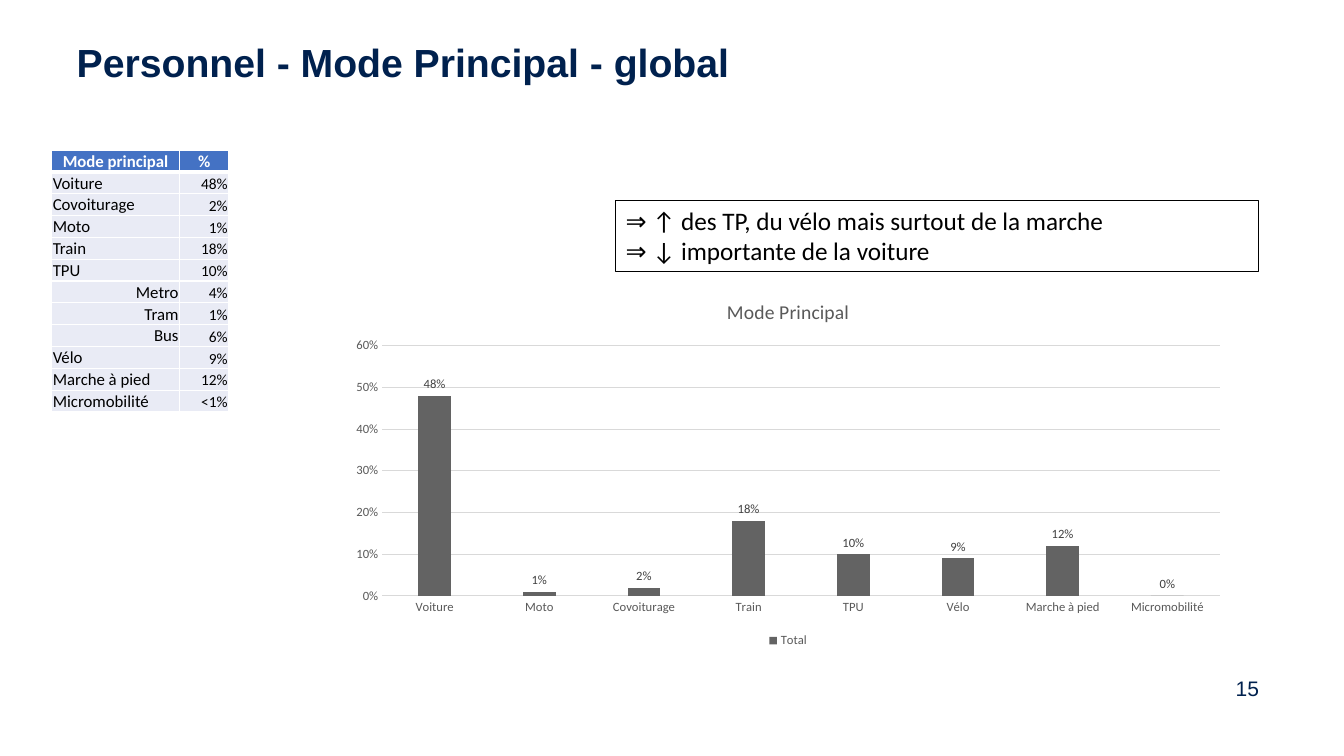
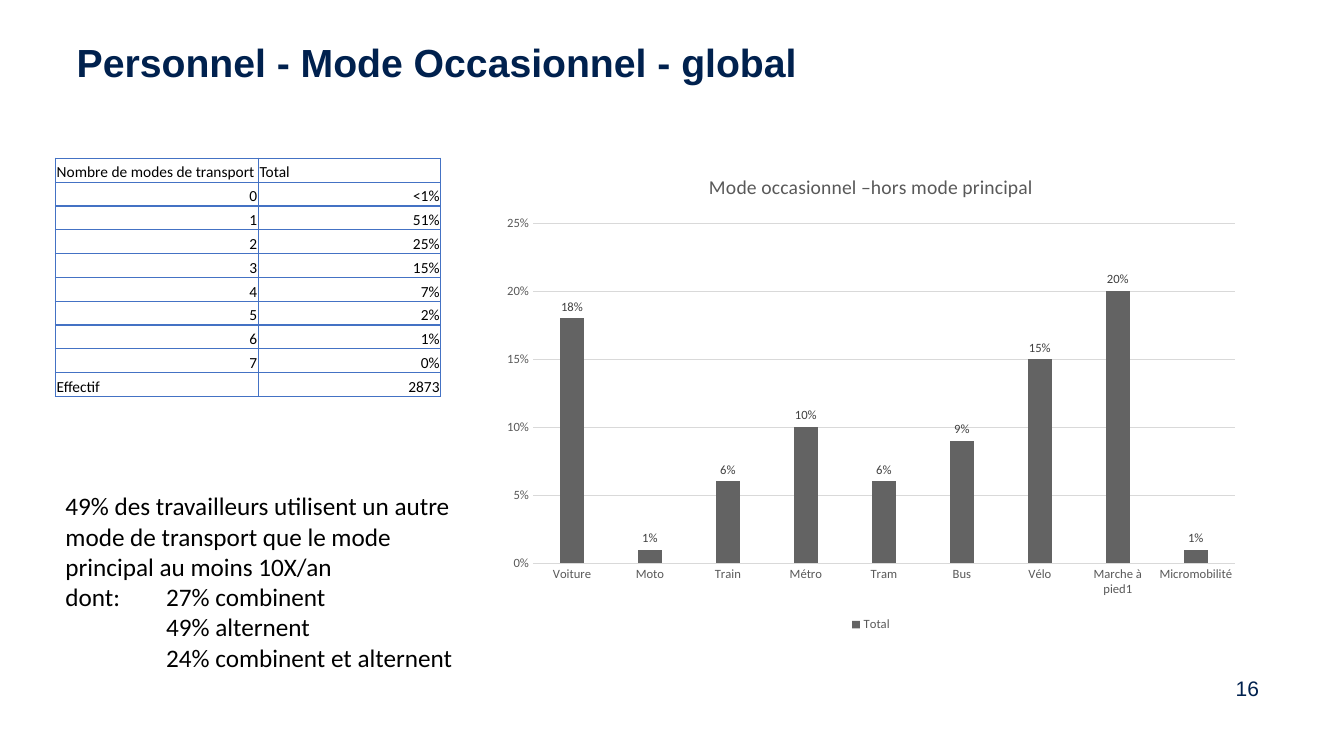
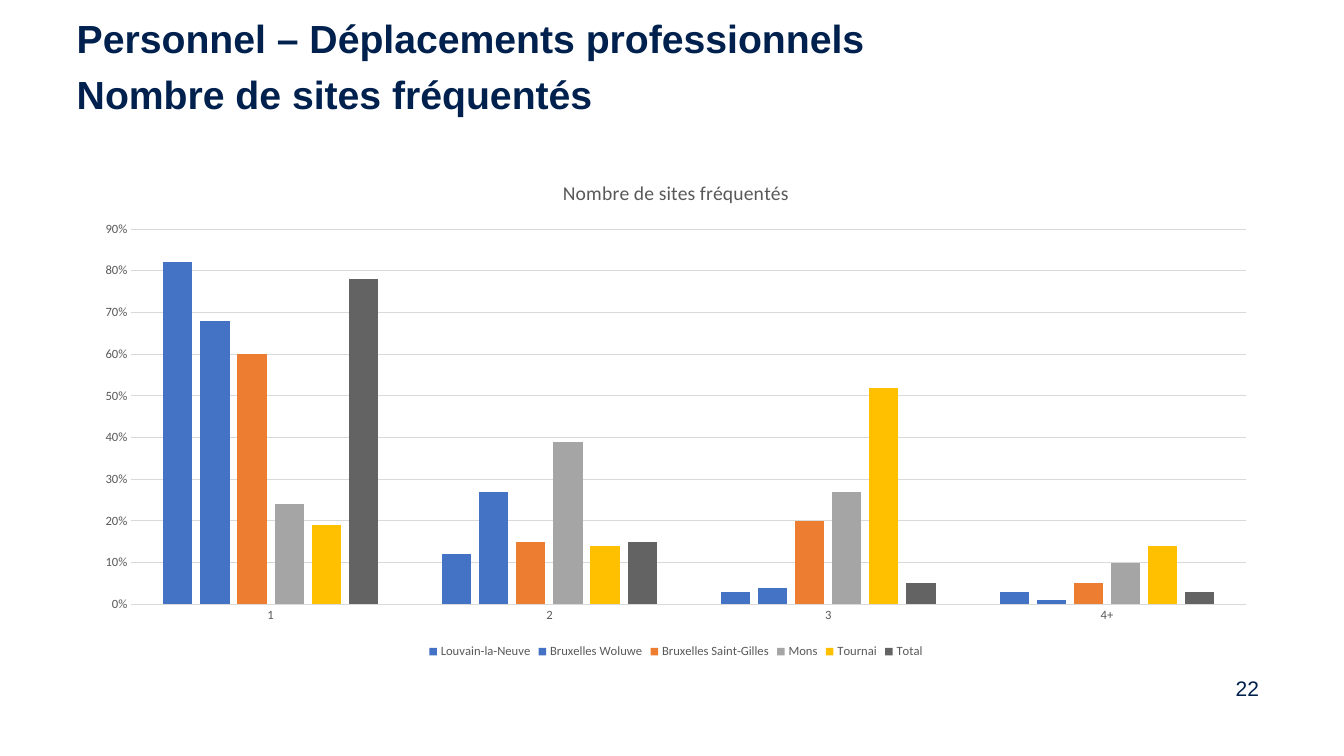
from lxml import etree
from pptx import Presentation
from pptx.chart.data import CategoryChartData
from pptx.dml.color import RGBColor
from pptx.enum.chart import XL_CHART_TYPE, XL_LABEL_POSITION, XL_LEGEND_POSITION, XL_TICK_MARK
from pptx.enum.shapes import MSO_SHAPE
from pptx.enum.text import MSO_ANCHOR, MSO_AUTO_SIZE, PP_ALIGN
from pptx.oxml.ns import qn
from pptx.util import Cm, Pt

NAVY = RGBColor(0x00, 0x21, 0x4E)
BLACK = RGBColor(0x00, 0x00, 0x00)
WHITE = RGBColor(0xFF, 0xFF, 0xFF)
BLUE = RGBColor(0x44, 0x72, 0xC4)
PALE_BLUE = RGBColor(0xE9, 0xEB, 0xF5)
ORANGE = RGBColor(0xED, 0x7D, 0x31)
SILVER = RGBColor(0xA5, 0xA5, 0xA5)
YELLOW = RGBColor(0xFF, 0xC0, 0x00)
DARK_GREY = RGBColor(0x63, 0x63, 0x63)
AXIS_GREY = RGBColor(0x59, 0x59, 0x59)
LABEL_GREY = RGBColor(0x40, 0x40, 0x40)
GRID_GREY = RGBColor(0xD9, 0xD9, 0xD9)

COLUMN_CLUSTERED = XL_CHART_TYPE.COLUMN_CLUSTERED
OUTSIDE_END = XL_LABEL_POSITION.OUTSIDE_END
LEGEND_BOTTOM = XL_LEGEND_POSITION.BOTTOM
NO_TICK = XL_TICK_MARK.NONE
RECTANGLE = MSO_SHAPE.RECTANGLE
TOP = MSO_ANCHOR.TOP
BOTTOM = MSO_ANCHOR.BOTTOM
NO_AUTOFIT = MSO_AUTO_SIZE.NONE
LEFT = PP_ALIGN.LEFT
CENTER = PP_ALIGN.CENTER
RIGHT = PP_ALIGN.RIGHT

TITLE_ONLY = 5
PERCENT = "0%"
TITLE_FONT = {"name": "Arial", "size": Pt(28), "bold": True}
NUMBER_FONT = {"name": "Arial", "size": Pt(15), "bold": False}
BODY_FONT = {"name": "Calibri", "size": Pt(18), "bold": False}
CHART_FONT = {"name": "Calibri", "size": Pt(9), "bold": False}
CHART_TITLE_FONT = {"name": "Calibri", "size": Pt(14), "bold": False}
HEADING_SPACING = {"line_spacing": 0.9, "space_before": Pt(10)}
FRAME_FORMAT = {"word_wrap": True, "auto_size": NO_AUTOFIT, "vertical_anchor": TOP}
CELL_FORMAT = {
    "margin_left": Cm(0.03),
    "margin_right": Cm(0.03),
    "margin_top": Cm(0.03),
    "margin_bottom": Cm(0),
    "vertical_anchor": BOTTOM,
}


def set_format(target, values):
    for name, value in values.items():
        setattr(target, name, value)


def set_font(font, values, color):
    set_format(font, values)
    font.color.rgb = color


class Deck:
    def __init__(self):
        self.presentation = Presentation()
        self.presentation.slide_width = Cm(33.87)
        self.presentation.slide_height = Cm(19.05)
        self.slide = None

    def fill_frame(self, frame, lines, font, color, spacing=None, tab=None):
        set_format(frame, FRAME_FORMAT)
        for index, line in enumerate(lines):
            paragraph = frame.paragraphs[0] if index == 0 else frame.add_paragraph()
            paragraph.alignment = LEFT
            if tab:
                properties = paragraph._p.get_or_add_pPr()
                tabs = etree.SubElement(properties, qn("a:tabLst"))
                etree.SubElement(tabs, qn("a:tab"), pos=str(tab), algn="l")
            set_format(paragraph, spacing or {})
            if index == 0:
                paragraph.space_before = Pt(0)
            run = paragraph.add_run()
            run.text = line
            set_font(run.font, font, color)

    def add_slide(self, title_lines, number, title_top=0.97):
        layout = self.presentation.slide_layouts[TITLE_ONLY]
        self.slide = self.presentation.slides.add_slide(layout)
        title = self.slide.shapes.title
        position = {"left": Cm(1.68), "top": Cm(title_top), "width": Cm(22.6), "height": Cm(1.19)}
        set_format(title, position)
        self.fill_frame(title.text_frame, title_lines, TITLE_FONT, NAVY, HEADING_SPACING)
        self.add_text((30.89, 16.97, 1.5, 1.19), [number], NUMBER_FONT, NAVY, HEADING_SPACING)

    def add_text(self, box, lines, font=BODY_FONT, color=BLACK, spacing=None, tab=None):
        shape = self.slide.shapes.add_textbox(*map(Cm, box))
        self.fill_frame(shape.text_frame, lines, font, color, spacing, tab)

    def add_framed_text(self, box, lines):
        shape = self.slide.shapes.add_shape(RECTANGLE, *map(Cm, box))
        shape.shadow.inherit = False
        shape.fill.solid()
        shape.fill.fore_color.rgb = WHITE
        shape.line.color.rgb = BLACK
        shape.line.width = Pt(0.75)
        self.fill_frame(shape.text_frame, lines, BODY_FONT, BLACK)

    def set_borders(self, cell, color, thick_side=None):
        properties = cell._tc.get_or_add_tcPr()
        for index, side in enumerate(("lnL", "lnR", "lnT", "lnB")):
            width = Pt(3 if side == thick_side else 1)
            line = etree.Element(qn("a:" + side), w=str(width))
            fill = etree.SubElement(line, qn("a:solidFill"))
            etree.SubElement(fill, qn("a:srgbClr"), val=str(color))
            properties.insert(index, line)

    def add_table(self, corner, widths, row_height, rows, right_labels, label_size, banner):
        left, top = map(Cm, corner)
        graphic = self.slide.shapes.add_table(
            len(rows), len(widths), left, top, Cm(sum(widths)), Cm(row_height * len(rows))
        )
        table = graphic.table
        set_format(table, {"first_row": banner, "horz_banding": False})
        for column, width in zip(table.columns, widths):
            column.width = Cm(width)
        for row_index, row in enumerate(rows):
            table.rows[row_index].height = Cm(row_height)
            header = row_index == 0
            for column_index, text in enumerate(row):
                cell = table.cell(row_index, column_index)
                set_format(cell, CELL_FORMAT)
                if banner:
                    cell.fill.solid()
                    cell.fill.fore_color.rgb = BLUE if header else PALE_BLUE
                    thick_side = {0: "lnB", 1: "lnT"}.get(row_index)
                    self.set_borders(cell, WHITE, thick_side)
                else:
                    cell.fill.background()
                    self.set_borders(cell, BLUE)
                paragraph = cell.text_frame.paragraphs[0]
                if header:
                    paragraph.alignment = CENTER if banner else LEFT
                else:
                    aligned_right = column_index == 1 or text in right_labels
                    paragraph.alignment = RIGHT if aligned_right else LEFT
                run = paragraph.add_run()
                run.text = text
                size = label_size if header or column_index == 0 else 11
                font = {"name": "Calibri", "size": Pt(size), "bold": header and banner}
                set_font(run.font, font, WHITE if header and banner else BLACK)

    def add_column_chart(self, box, title, categories, series, maximum, step, labels=True):
        data = CategoryChartData(number_format=PERCENT)
        data.categories = categories
        for name, values, _ in series:
            data.add_series(name, values)
        chart = self.slide.shapes.add_chart(COLUMN_CLUSTERED, *map(Cm, box), data).chart
        set_font(chart.font, CHART_FONT, AXIS_GREY)

        chart.has_title = True
        chart.chart_title.include_in_layout = False
        paragraph = chart.chart_title.text_frame.paragraphs[0]
        run = paragraph.add_run()
        run.text = title
        set_font(run.font, CHART_TITLE_FONT, AXIS_GREY)

        chart.has_legend = True
        set_format(chart.legend, {"position": LEGEND_BOTTOM, "include_in_layout": False})
        set_font(chart.legend.font, CHART_FONT, AXIS_GREY)

        for axis in (chart.category_axis, chart.value_axis):
            set_format(axis, {"major_tick_mark": NO_TICK, "minor_tick_mark": NO_TICK})
            set_font(axis.tick_labels.font, CHART_FONT, AXIS_GREY)
        value_axis = chart.value_axis
        scale = {"minimum_scale": 0, "maximum_scale": maximum, "major_unit": step}
        set_format(value_axis, scale)
        percent_format = {"number_format": PERCENT, "number_format_is_linked": False}
        set_format(value_axis.tick_labels, percent_format)
        value_axis.format.line.fill.background()
        for line in (chart.category_axis.format.line, value_axis.major_gridlines.format.line):
            line.color.rgb = GRID_GREY
            line.width = Pt(0.75)

        plot = chart.plots[0]
        set_format(plot, {"gap_width": 219, "overlap": -27, "vary_by_categories": False})
        for bars, (_, _, color) in zip(plot.series, series):
            bars.format.fill.solid()
            bars.format.fill.fore_color.rgb = color
        if labels:
            plot.has_data_labels = True
            label_format = {"show_value": True, "position": OUTSIDE_END, **percent_format}
            set_format(plot.data_labels, label_format)
            set_font(plot.data_labels.font, CHART_FONT, LABEL_GREY)


def add_main_mode(deck):
    deck.add_slide(["Personnel - Mode Principal - global"], "15")
    rows = [
        ("Mode principal", "%"),
        ("Voiture", "48%"),
        ("Covoiturage", "2%"),
        ("Moto", "1%"),
        ("Train", "18%"),
        ("TPU", "10%"),
        ("Metro", "4%"),
        ("Tram", "1%"),
        ("Bus", "6%"),
        ("Vélo", "9%"),
        ("Marche à pied", "12%"),
        ("Micromobilité", "<1%"),
    ]
    deck.add_table(
        (1.3, 3.78), (3.23, 1.24), 0.55, rows, ("Metro", "Tram", "Bus"), label_size=12, banner=True
    )
    deck.add_column_chart(
        (8.53, 7.11, 22.66, 9.32),
        "Mode Principal",
        ["Voiture", "Moto", "Covoiturage", "Train", "TPU", "Vélo", "Marche à pied", "Micromobilité"],
        [("Total", (0.48, 0.01, 0.02, 0.18, 0.1, 0.09, 0.12, 0), DARK_GREY)],
        maximum=0.6,
        step=0.1,
    )
    deck.add_framed_text(
        (15.52, 5.05, 16.2, 1.8),
        ["⇒ ↑ des TP, du vélo mais surtout de la marche", "⇒ ↓ importante de la voiture"],
    )


def add_occasional_mode(deck):
    deck.add_slide(["Personnel - Mode Occasionnel - global"], "16")
    shares = ("<1%", "51%", "25%", "15%", "7%", "2%", "1%", "0%")
    counts = [str(count) for count in range(len(shares))]
    rows = [("Nombre de modes de transport", "Total"), *zip(counts, shares), ("Effectif", "2873")]
    deck.add_table((1.4, 3.99), (5.11, 4.6), 0.6, rows, counts, label_size=11, banner=False)
    deck.add_column_chart(
        (12.4, 3.91, 19.1, 12.12),
        "Mode occasionnel –hors mode principal",
        ["Voiture", "Moto", "Train", "Métro", "Tram", "Bus", "Vélo", "Marche à pied1", "Micromobilité"],
        [("Total", (0.18, 0.01, 0.06, 0.1, 0.06, 0.09, 0.15, 0.2, 0.01), DARK_GREY)],
        maximum=0.25,
        step=0.05,
    )
    deck.add_text(
        (1.4, 12.24, 11, 4.88),
        [
            "49% des travailleurs utilisent un autre mode de transport "
            "que le mode principal au moins 10X/an",
            "dont: \t27% combinent",
            "\t49% alternent",
            "\t24% combinent et alternent",
        ],
        tab=Cm(2.54),
    )


def add_visited_sites(deck):
    deck.add_slide(
        ["Personnel – Déplacements professionnels", "Nombre de sites fréquentés"], "22", title_top=0.36
    )
    deck.add_column_chart(
        (2.06, 4.04, 29.95, 12.67),
        "Nombre de sites fréquentés",
        ["1", "2", "3", "4+"],
        [
            ("Louvain-la-Neuve", (0.82, 0.12, 0.03, 0.03), BLUE),
            ("Bruxelles Woluwe", (0.68, 0.27, 0.04, 0.01), BLUE),
            ("Bruxelles Saint-Gilles", (0.6, 0.15, 0.2, 0.05), ORANGE),
            ("Mons", (0.24, 0.39, 0.27, 0.1), SILVER),
            ("Tournai", (0.19, 0.14, 0.52, 0.14), YELLOW),
            ("Total", (0.78, 0.15, 0.05, 0.03), DARK_GREY),
        ],
        maximum=0.9,
        step=0.1,
        labels=False,
    )


def main():
    deck = Deck()
    add_main_mode(deck)
    add_occasional_mode(deck)
    add_visited_sites(deck)
    deck.presentation.save("out.pptx")


if __name__ == "__main__":
    main()
